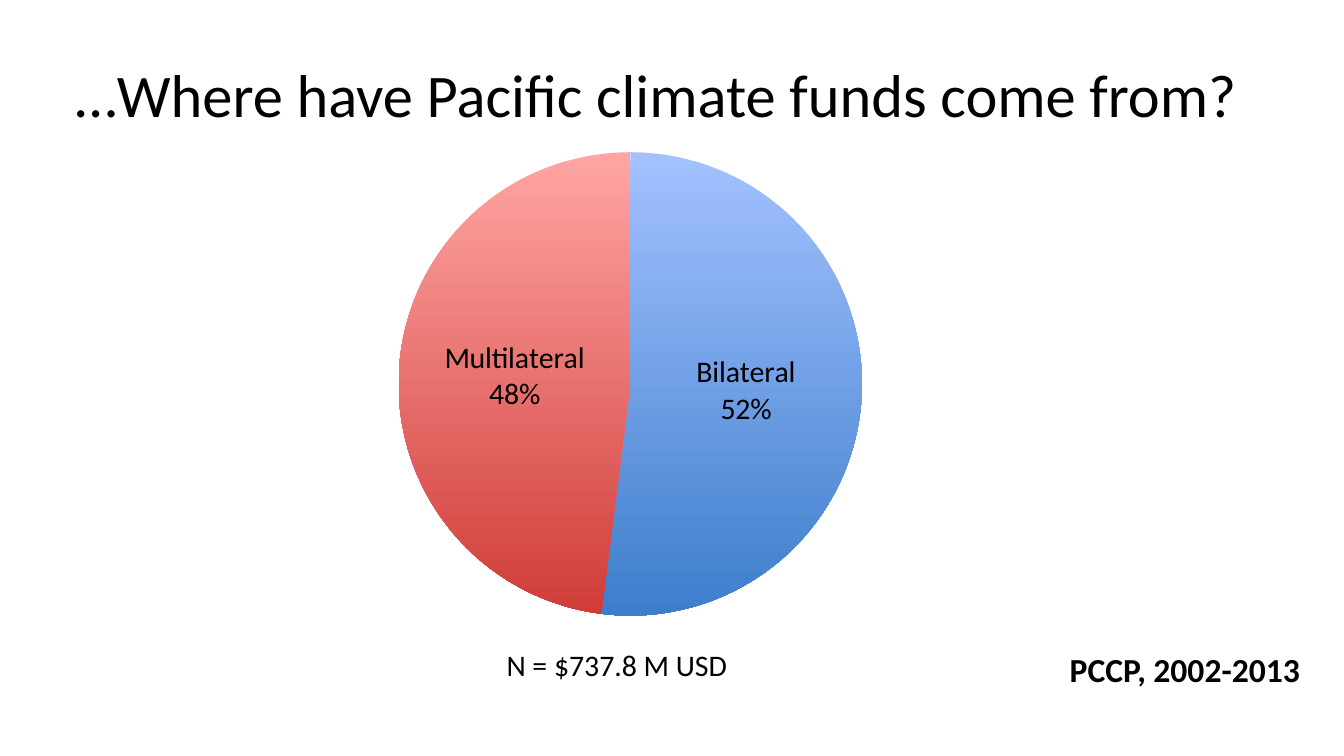
import dataclasses

import pptx
import pptx.chart.data
import pptx.dml.color
import pptx.enum.chart
import pptx.enum.text
import pptx.oxml
import pptx.oxml.ns
import pptx.util

Pt = pptx.util.Pt
RGB = pptx.dml.color.RGBColor.from_string
CENTER = pptx.enum.text.PP_ALIGN.CENTER


@dataclasses.dataclass(frozen=True)
class Theme:
    font: str = "Calibri"
    text: str = "000000"
    title_size: float = 32.4
    source_size: float = 18
    label_size: float = 16
    # Top and bottom colour of each slice.
    slices: tuple = (("A3C1FF", "3D7ECC"), ("FFA5A3", "D03D39"))


class SlideBuilder:
    def __init__(self, presentation, theme):
        self.theme = theme
        self.slide = presentation.slides.add_slide(presentation.slide_layouts[5])

    def style_font(self, font, size, bold=False):
        font.name = self.theme.font
        font.size = Pt(size)
        font.bold = bold
        font.color.rgb = RGB(self.theme.text)

    def set_text(self, shape, text, size, alignment, bold=False):
        shape.text_frame.word_wrap = True
        paragraph = shape.text_frame.paragraphs[0]
        paragraph.text = text
        paragraph.alignment = alignment
        self.style_font(paragraph.font, size, bold)

    def title(self, text, left, top, width, height):
        shape = self.slide.shapes.title
        shape.left, shape.top = Pt(left), Pt(top)
        shape.width, shape.height = Pt(width), Pt(height)
        shape.text_frame.vertical_anchor = pptx.enum.text.MSO_ANCHOR.MIDDLE
        self.set_text(shape, text, self.theme.title_size, CENTER)

    def text(self, text, left, top, width, height, size, alignment=None, bold=False):
        shape = self.slide.shapes.add_textbox(Pt(left), Pt(top), Pt(width), Pt(height))
        self.set_text(shape, text, size, alignment, bold)

    def pie(self, shares, left, top, width, height, plot_area):
        """Draw a labelled pie; plot_area gives x, y, w, h as fractions of the chart."""
        data = pptx.chart.data.CategoryChartData()
        data.categories = list(shares)
        data.add_series("Series 1", list(shares.values()))
        chart = self.slide.shapes.add_chart(
            pptx.enum.chart.XL_CHART_TYPE.PIE,
            Pt(left), Pt(top), Pt(width), Pt(height), data,
        ).chart
        chart.has_legend = False
        chart.has_title = False
        self.style_font(chart.font, self.theme.label_size)
        chart.plots[0].vary_by_categories = True
        series = chart.plots[0].series[0]
        for index, colors in enumerate(self.theme.slices):
            fill = series.points[index].format.fill
            fill.gradient()
            fill.gradient_angle = 270
            for stop, color in zip(fill.gradient_stops, colors):
                stop.color.rgb = RGB(color)

        labels = series.data_labels
        labels.show_value = False
        labels.show_category_name = True
        labels.show_percentage = True
        labels.number_format = "0%"
        labels.number_format_is_linked = False
        labels.position = pptx.enum.chart.XL_LABEL_POSITION.CENTER
        self.style_font(labels.font, self.theme.label_size)
        self.stack_labels(chart)
        self.place_plot(chart, plot_area)

    def stack_labels(self, chart):
        """Put the category and its percentage on separate lines."""
        separator = pptx.oxml.parse_xml(
            f"<c:separator {pptx.oxml.ns.nsdecls('c')}>\n</c:separator>"
        )
        chart.element.xpath(".//c:ser/c:dLbls/c:showBubbleSize")[0].addnext(separator)

    def place_plot(self, chart, plot_area):
        area = chart.element.xpath(".//c:plotArea")[0]
        for layout in area.xpath("./c:layout"):
            area.remove(layout)
        modes = "".join(f'<c:{axis}Mode val="edge"/>' for axis in "xy")
        values = "".join(
            f'<c:{name} val="{value}"/>' for name, value in zip("xywh", plot_area)
        )
        area.insert(0, pptx.oxml.parse_xml(
            f"<c:layout {pptx.oxml.ns.nsdecls('c')}><c:manualLayout>"
            f'<c:layoutTarget val="inner"/>{modes}{values}'
            "</c:manualLayout></c:layout>"
        ))


def main():
    presentation = pptx.Presentation()
    presentation.slide_width, presentation.slide_height = Pt(720), Pt(405)
    theme = Theme()
    builder = SlideBuilder(presentation, theme)
    builder.pie(
        {"Bilateral": 52, "Multilateral": 48},
        124, 48, 407, 315.5, plot_area=(0.22, 0.1, 0.61, 0.8),
    )
    builder.text("PCCP, 2002-2013", 566, 344, 144, 29, theme.source_size, bold=True)
    builder.text("N = $737.8 M USD", 239, 343, 183, 27, theme.label_size, CENTER)
    builder.title(
        "…Where have Pacific climate funds come from?", 27.5, 16.5, 648, 67.5
    )
    presentation.save("out.pptx")


if __name__ == "__main__":
    main()
